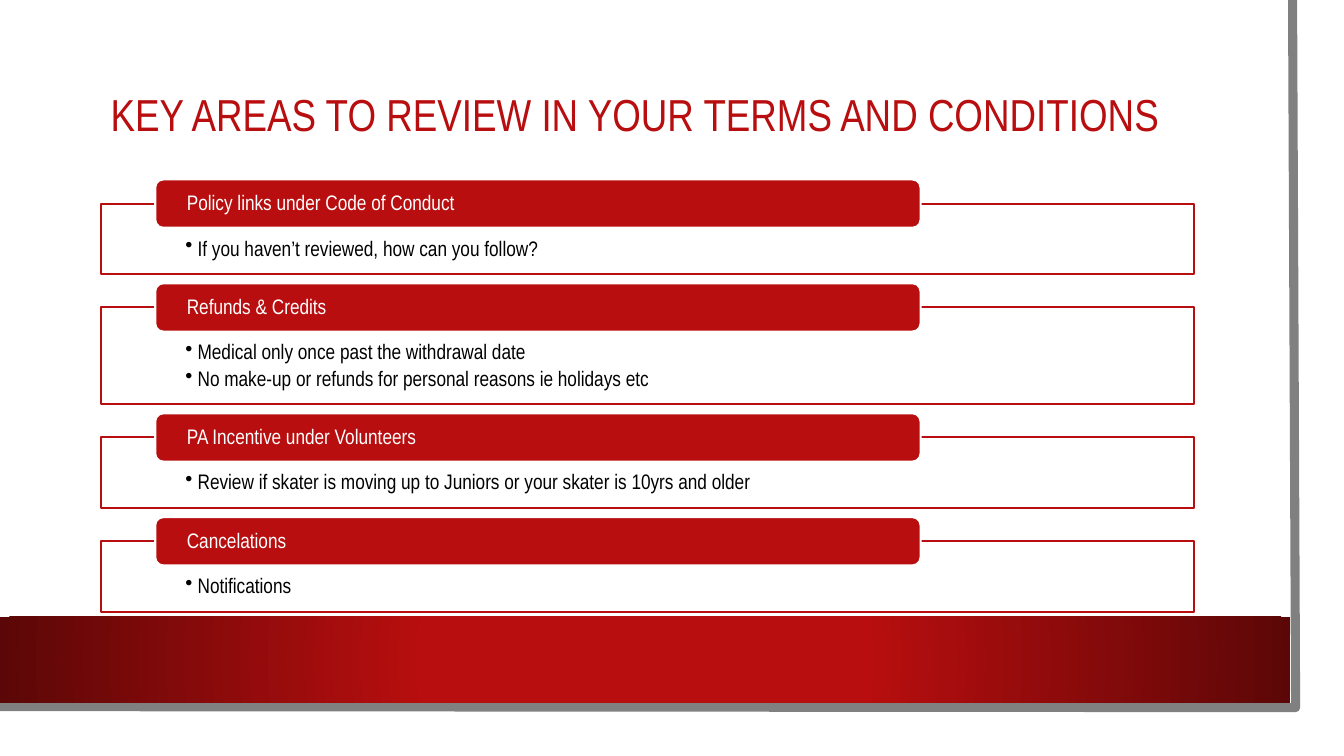
from lxml import etree
from pptx import Presentation, util as u
from pptx.dml.color import RGBColor
from pptx.enum import shapes, text
from pptx.oxml import parse_xml
from pptx.oxml.ns import nsdecls, qn

COLORS = {"red": "B80E0F", "dark": "5C0707", "gray": "808080", "white": "FFFFFF", "black": "000000"}
FONT = "Arial Narrow"
TERMS = [
    ("Policy links under Code of Conduct", ["If you haven’t reviewed, how can you follow?"]),
    ("Refunds & Credits", ["Medical only once past the withdrawal date",
                           "No make-up or refunds for personal reasons ie holidays etc"]),
    ("PA Incentive under Volunteers",
     ["Review if skater is moving up to Juniors or your skater is 10yrs and older"]),
    ("Cancelations", ["Notifications"]),
]

deck = Presentation()
deck.slide_width, deck.slide_height = u.Inches(13.33), u.Inches(7.5)
page = deck.slides.add_slide(deck.slide_layouts[6])

# Grid of 40 columns by 30 rows
COL, ROW = deck.slide_width / 40, deck.slide_height / 30
LEFT, WIDTH = 3, 32.53
TAB_LEFT, TAB_WIDTH, TAB_HEIGHT = 4.62, 22.78, 1.92
FRAME_BASE, BULLET_ROWS, GAP = 1.76, 1.04, 1.32


def add_box(kind, col, row, cols, rows, fill, line=None):
    box = page.shapes.add_shape(kind, int(col * COL), int(row * ROW), int(cols * COL), int(rows * ROW))
    box.shadow.inherit = False
    box.fill.solid()
    box.fill.fore_color.rgb = RGBColor.from_string(COLORS[fill])
    if line:
        box.line.color.rgb = RGBColor.from_string(COLORS[line])
        box.line.width = u.Pt(1.5)
    else:
        box.line.fill.background()
    return box


def write(box, lines, size, color, anchor, margins, bullet=False):
    frame = box.text_frame
    frame.word_wrap = True
    frame.vertical_anchor = anchor
    frame.margin_left, frame.margin_top, frame.margin_right, frame.margin_bottom = map(u.Inches, margins)
    for number, line in enumerate(lines):
        para = frame.paragraphs[0] if number == 0 else frame.add_paragraph()
        para.text = line
        para.alignment = text.PP_ALIGN.LEFT
        para.line_spacing = 0.9
        if bullet:
            para.space_after = u.Pt(3)
            props = para._p.get_or_add_pPr()
            props.set("marL", str(u.Inches(0.12)))
            props.set("indent", str(-u.Inches(0.12)))
            etree.SubElement(props, qn("a:buChar")).set("char", "•")
        para.font.name, para.font.size = FONT, u.Pt(size)
        para.font.color.rgb = RGBColor.from_string(COLORS[color])


# Gray edge along the right and bottom
builder = page.shapes.build_freeform(int(38.47 * COL), 0)
builder.add_line_segments([(int(38.56 * COL), int(28.08 * ROW)), (int(-0.09 * COL), int(28.04 * ROW))],
                          close=False)
edge = builder.convert_to_shape()
edge.shadow.inherit = False
edge.fill.background()
edge.line.color.rgb = RGBColor.from_string(COLORS["gray"])
edge.line.width = u.Pt(6.5)

# Red band with darker ends
band = add_box(shapes.MSO_SHAPE.RECTANGLE, 0, 24.48, 38.41, 3.4, "red")
solid = band._element.spPr.find(qn("a:solidFill"))
solid.getparent().replace(solid, parse_xml(
    f'<a:gradFill {nsdecls("a")} rotWithShape="1"><a:gsLst>'
    f'<a:gs pos="34000"><a:srgbClr val="{COLORS["red"]}"/></a:gs>'
    f'<a:gs pos="100000"><a:srgbClr val="{COLORS["dark"]}"/></a:gs></a:gsLst>'
    '<a:path path="circle"><a:fillToRect l="50000" t="50000" r="50000" b="50000"/></a:path>'
    '</a:gradFill>'))

# Title
title = page.shapes.add_textbox(int(LEFT * COL), int(1.76 * ROW), int(WIDTH * COL), int(5.8 * ROW))
write(title, ["KEY AREAS TO REVIEW IN YOUR TERMS AND CONDITIONS"], 32, "red",
      text.MSO_ANCHOR.MIDDLE, (0.1, 0.05, 0.1, 0.05))

# Framed sections, each as tall as its bullets need
top = 8.08
for heading, bullets in TERMS:
    height = FRAME_BASE + BULLET_ROWS * len(bullets)
    panel = add_box(shapes.MSO_SHAPE.RECTANGLE, LEFT, top, WIDTH, height, "white", "red")
    write(panel, bullets, 15, "black", text.MSO_ANCHOR.TOP, (0.84, 0.34, 0.84, 0.12), bullet=True)
    tab = add_box(shapes.MSO_SHAPE.ROUNDED_RECTANGLE, TAB_LEFT, top - TAB_HEIGHT / 2,
                  TAB_WIDTH, TAB_HEIGHT, "red", "white")
    write(tab, [heading], 15, "white", text.MSO_ANCHOR.MIDDLE, (0.29, 0, 0.29, 0))
    top += height + GAP

deck.save("out.pptx")
